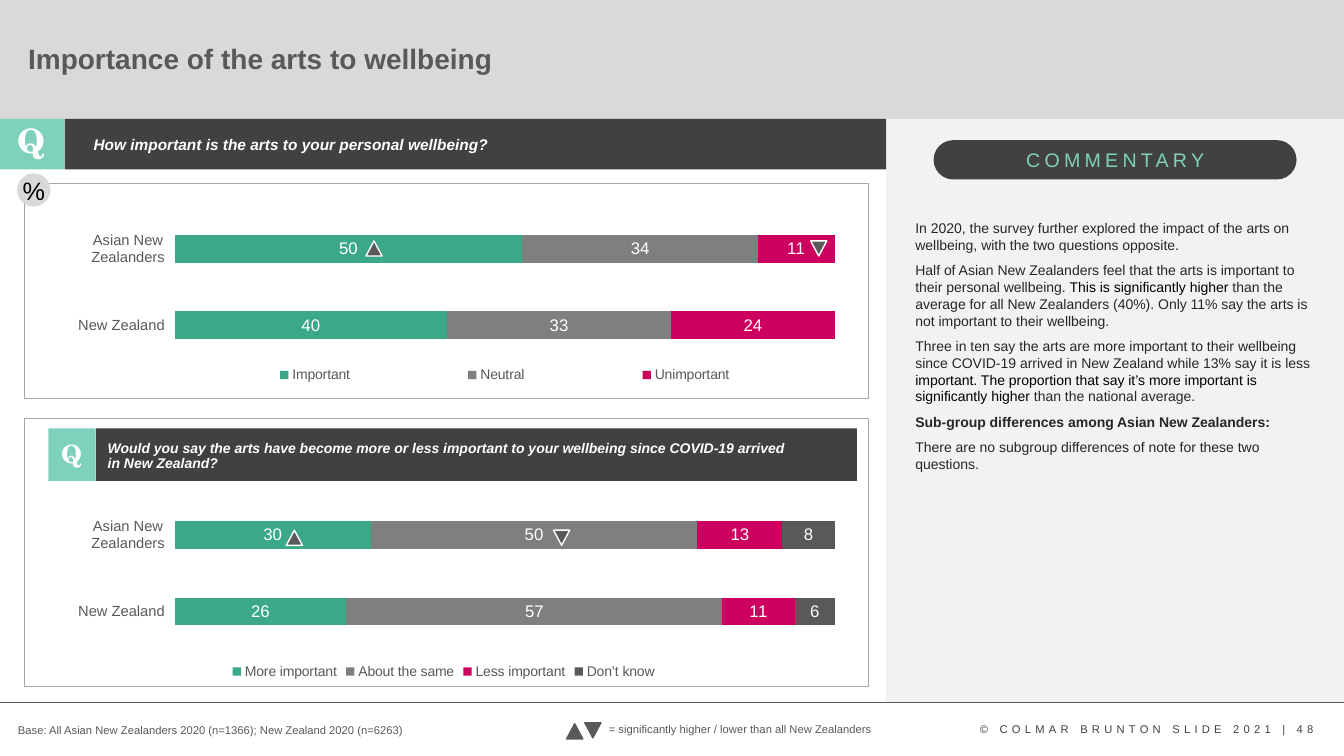
from dataclasses import dataclass

from lxml.etree import SubElement
from pptx import Presentation
from pptx.chart.data import CategoryChartData
from pptx.dml.color import RGBColor
from pptx.enum.chart import XL_CHART_TYPE, XL_LABEL_POSITION, XL_LEGEND_POSITION, XL_TICK_MARK
from pptx.enum.shapes import MSO_CONNECTOR, MSO_SHAPE
from pptx.enum.text import MSO_ANCHOR, PP_ALIGN
from pptx.oxml.ns import qn
from pptx.util import Inches, Pt

# Content
TITLE = "Importance of the arts to wellbeing"
FIRST_QUESTION = "How important is the arts to your personal wellbeing?"
SECOND_QUESTION = ("Would you say the arts have become more or less important to your "
                   "wellbeing since COVID-19 arrived in New Zealand?")
GROUPS = ["New Zealand", "Asian New Zealanders"]
PERSONAL = [("Important", (40, 50)), ("Neutral", (33, 34)), ("Unimportant", (24, 11))]
COVID = [("More important", (26, 30)), ("About the same", (57, 50)),
         ("Less important", (11, 13)), ("Don’t know", (6, 8))]
# Each paragraph is a list of (text, style)
COMMENTARY = [
    [("In 2020, the survey further explored the impact of the arts on wellbeing, "
      "with the two questions opposite.", "plain")],
    [("Half of Asian New Zealanders feel that the arts is important to their personal "
      "wellbeing. ", "plain"),
     ("This is significantly higher ", "strong"),
     ("than the average for all New Zealanders (40%). Only 11% say the arts is not "
      "important to their wellbeing.", "plain")],
    [("Three in ten say the arts are more important to their wellbeing since COVID-19 "
      "arrived in New Zealand while 13% say it is less ", "plain"),
     ("important. The proportion that say it’s more important is significantly higher ", "strong"),
     ("than the national average.", "plain")],
    [("Sub-group differences among Asian New Zealanders:", "bold")],
    [("There are no subgroup differences of note for these two questions.", "plain")],
]
BASE = "Base: All Asian New Zealanders 2020 (n=1366); New Zealand 2020 (n=6263)"
KEY = "= significantly higher / lower than all New Zealanders"
COPYRIGHT = "© COLMAR BRUNTON SLIDE 2021 | 48"


@dataclass(frozen=True)
class Theme:
    font: str = "Arial"
    serif: str = "TeX Gyre Schola"
    white: str = "FFFFFF"
    black: str = "000000"
    ink: str = "262626"
    copyright: str = "404040"
    grey: str = "595959"
    dark: str = "414141"
    mint: str = "7ED2BB"
    frame: str = "A6A6A6"
    header: str = "D9D9D9"
    sidebar: str = "F2F2F2"
    series: tuple = ("3AA889", "7F7F7F", "CD005F", "595959")
    title: float = 20
    letter: float = 24
    symbol: float = 18
    heading: float = 14
    value: float = 12
    question: float = 11
    category: float = 10.5
    body: float = 10
    small: float = 8


THEME = Theme()

# Grid, in inches
WIDTH, HEIGHT = 13.33, 7.5
HEADER_END, BAND, FOOTER = 1.18, 0.5, 6.97
SPLIT = 8.79
FRAME_LEFT, FRAME_WIDTH = 0.24, 8.37
CHART_LEFT, CHART_WIDTH, CHART_HEIGHT = 0.36, 8.08, 2.08
FIRST_CHART, SECOND_CHART = 1.86, 4.7
MARK_WIDTH, MARK_HEIGHT = 0.16, 0.15

deck = Presentation()
deck.slide_width, deck.slide_height = Inches(WIDTH), Inches(HEIGHT)
page = deck.slides.add_slide(deck.slide_layouts[6])


def color(value):
    return RGBColor.from_string(value)


def style(font, size, ink, bold=False, italic=False, face=THEME.font):
    font.name, font.size, font.bold, font.italic = face, Pt(size), bold, italic
    font.color.rgb = color(ink)


def add_block(kind, left, top, width, height, fill=None, line=None, weight=0.5):
    block = page.shapes.add_shape(kind, *map(Inches, (left, top, width, height)))
    block.shadow.inherit = False
    if fill:
        block.fill.solid()
        block.fill.fore_color.rgb = color(fill)
    else:
        block.fill.background()
    if line:
        block.line.color.rgb = color(line)
        block.line.width = Pt(weight)
    else:
        block.line.fill.background()
    return block


def add_text(text, left, top, width, height, size, ink, align=PP_ALIGN.LEFT,
             wrap=True, tracking=0, line_spacing=None, **look):
    box = page.shapes.add_textbox(*map(Inches, (left, top, width, height)))
    box.text_frame.word_wrap = wrap
    para = box.text_frame.paragraphs[0]
    para.text, para.alignment, para.line_spacing = text, align, line_spacing
    span = para.runs[0]
    style(span.font, size, ink, **look)
    if tracking:
        span.font._element.set("spc", str(tracking * 100))
    return box


def add_marker(left, top, down, line=THEME.white):
    marker = add_block(MSO_SHAPE.ISOSCELES_TRIANGLE, left, top, MARK_WIDTH, MARK_HEIGHT,
                       THEME.grey, line, 1)
    marker.rotation = 180 if down else 0


def make_layout(parent, target, **shares):
    for old in parent.findall(qn("c:layout")):
        parent.remove(old)
    layout = SubElement(parent, qn("c:layout"))
    manual = SubElement(layout, qn("c:manualLayout"))
    if target:
        SubElement(manual, qn("c:layoutTarget")).set("val", target)
    for axis in "xy":
        SubElement(manual, qn(f"c:{axis}Mode")).set("val", "edge")
    for name, share in shares.items():
        SubElement(manual, qn(f"c:{name}")).set("val", str(share))
    return layout


def add_bars(top, series, legend_shares=None):
    data = CategoryChartData()
    data.categories = GROUPS
    for name, values in series:
        data.add_series(name, values)
    chart = page.shapes.add_chart(
        XL_CHART_TYPE.BAR_STACKED_100,
        *map(Inches, (CHART_LEFT, top, CHART_WIDTH, CHART_HEIGHT)), data).chart
    style(chart.font, THEME.body, THEME.black)
    chart.has_title = False
    plot = chart.plots[0]
    plot.gap_width, plot.overlap, plot.vary_by_categories = 177, 100, False
    for bar, fill in zip(plot.series, THEME.series):
        bar.format.fill.solid()
        bar.format.fill.fore_color.rgb = color(fill)
        labels = bar.data_labels
        labels.show_value, labels.position = True, XL_LABEL_POSITION.CENTER
        style(labels.font, THEME.value, THEME.white)
    axis = chart.category_axis
    axis.major_tick_mark = XL_TICK_MARK.OUTSIDE
    axis.format.line.fill.background()
    style(axis.tick_labels.font, THEME.category, THEME.grey)
    chart.value_axis.visible = False
    chart.value_axis.has_major_gridlines = False
    chart.has_legend = True
    legend = chart.legend
    legend.position, legend.include_in_layout = XL_LEGEND_POSITION.BOTTOM, False
    style(legend.font, THEME.body, THEME.grey)
    area = chart._chartSpace.chart.plotArea
    area.insert(0, make_layout(area, "inner", x=0.17, y=0.11, w=0.81, h=0.73))
    if legend_shares:
        key = legend._element
        key.find(qn("c:legendPos")).addnext(make_layout(key, None, **legend_shares))


# Background bands
add_block(MSO_SHAPE.RECTANGLE, 0, 0, WIDTH, HEADER_END, THEME.header)
add_block(MSO_SHAPE.RECTANGLE, SPLIT, HEADER_END, WIDTH - SPLIT, FOOTER - HEADER_END, THEME.sidebar)
rule = page.shapes.add_connector(MSO_CONNECTOR.STRAIGHT, 0, Inches(FOOTER),
                                 Inches(WIDTH), Inches(FOOTER))
rule.line.color.rgb, rule.line.width = color(THEME.grey), Pt(0.5)
SubElement(rule._element.spPr, qn("a:effectLst"))
title = add_text(TITLE, 0.18, 0.21, 11.19, 0.78, THEME.title, THEME.grey, bold=True, line_spacing=0.9)
title.text_frame.vertical_anchor = MSO_ANCHOR.MIDDLE

# Panels and charts
for top, height in ((1.82, 2.13), (4.15, 2.66)):
    add_block(MSO_SHAPE.RECTANGLE, FRAME_LEFT, top, FRAME_WIDTH, height, line=THEME.frame)
add_bars(FIRST_CHART, PERSONAL, {"x": 0.16, "y": 0.84, "w": 0.83, "h": 0.11})
add_bars(SECOND_CHART, COVID)

# Question bands: left, top, icon width, band end, height, letter top and size, text place and size
QUESTIONS = [
    (FIRST_QUESTION, 0, HEADER_END, 0.64, SPLIT, BAND, 1.14, THEME.letter,
     (0.83, 1.31, 7.6, 0.46), THEME.question),
    (SECOND_QUESTION, 0.48, 4.25, 0.47, 8.5, 0.52, 4.3, THEME.symbol,
     (0.97, 4.33, 6.95, 0.4), THEME.body),
]
for text, left, top, icon, end, height, letter_top, letter_size, place, size in QUESTIONS:
    add_block(MSO_SHAPE.RECTANGLE, left + icon, top, end - left - icon, height, THEME.dark)
    add_block(MSO_SHAPE.RECTANGLE, left, top, icon, height, THEME.mint)
    add_text("Q", left + icon / 2 - 0.24, letter_top, 0.47, 0.45, letter_size, THEME.white,
             PP_ALIGN.CENTER, bold=True, face=THEME.serif)
    add_text(text, *place, size, THEME.white, bold=True, italic=True, line_spacing=0.9)

# Percent badge
badge = add_block(MSO_SHAPE.OVAL, 0.17, 1.72, 0.33, 0.33, THEME.header)
frame = badge.text_frame
frame.margin_left = frame.margin_right = frame.margin_top = frame.margin_bottom = 0
frame.vertical_anchor, frame.word_wrap = MSO_ANCHOR.MIDDLE, False
frame.text = "%"
frame.paragraphs[0].alignment = PP_ALIGN.CENTER
style(frame.paragraphs[0].runs[0].font, THEME.symbol, THEME.black)

# Significance markers on the top bar of each chart
for top, marks in ((2.39, ((3.63, False), (8.04, True))), (5.26, ((2.84, False), (5.49, True)))):
    for left, down in marks:
        add_marker(left, top, down)

# Commentary
pill = add_block(MSO_SHAPE.ROUNDED_RECTANGLE, 9.26, 1.39, 3.6, 0.39, THEME.dark)
pill.adjustments[0] = 0.5
add_text("COMMENTARY", 10.08, 1.42, 2.02, 0.34, THEME.heading, THEME.mint, wrap=False, tracking=3)
notes = page.shapes.add_textbox(*map(Inches, (8.98, 2.13, 4.12, 2.63))).text_frame
notes.word_wrap = True
for index, spans in enumerate(COMMENTARY):
    para = notes.add_paragraph() if index else notes.paragraphs[0]
    if index:
        para.space_before = Pt(6)
    for text, look in spans:
        span = para.add_run()
        span.text = text
        style(span.font, THEME.body, THEME.black if look == "strong" else THEME.ink, look == "bold")

# Footer
add_text(BASE, 0.08, 7.13, 4.88, 0.24, THEME.small, THEME.grey)
add_marker(5.62, 7.18, False, THEME.grey)
add_marker(5.8, 7.17, True, THEME.grey)
add_text(KEY, 5.94, 7.12, 2.84, 0.24, THEME.small, THEME.grey, wrap=False)
add_text(COPYRIGHT, 9.62, 7.12, 3.61, 0.24, THEME.small, THEME.copyright, tracking=3)

deck.save("out.pptx")
